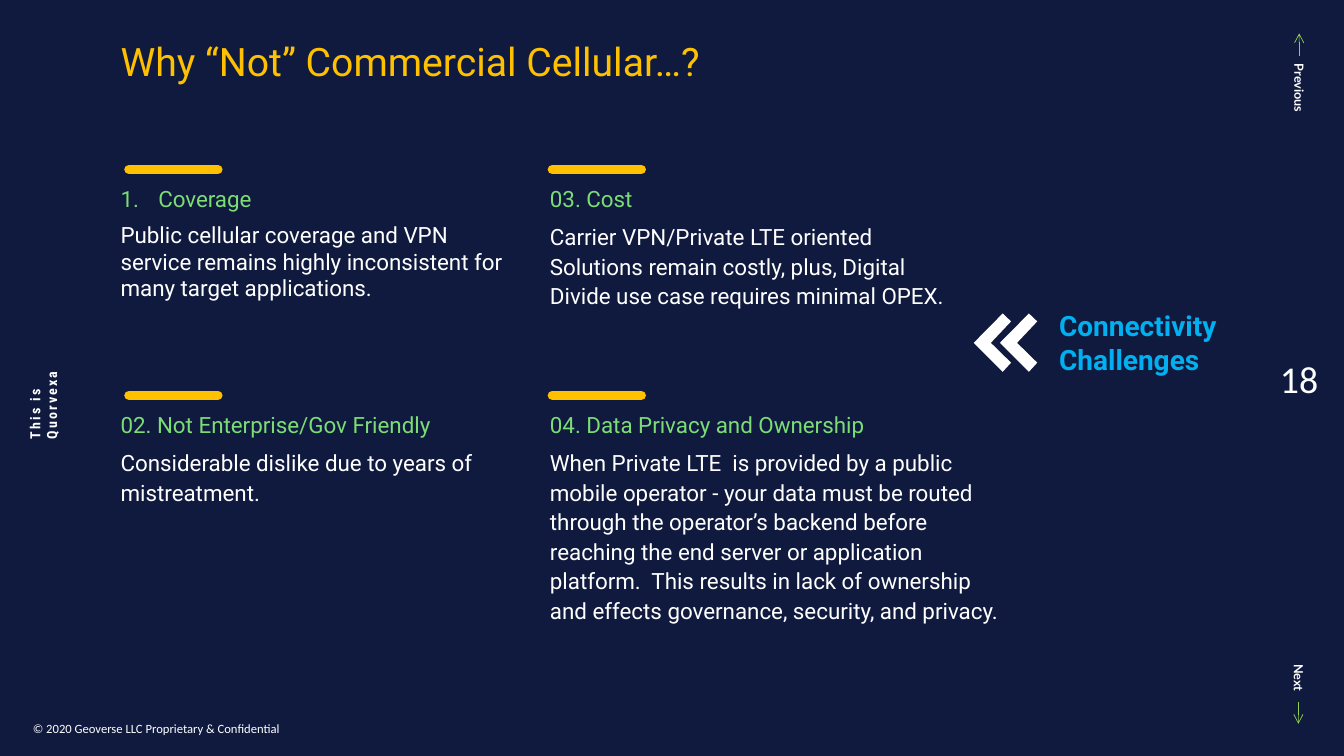
from lxml import etree
from pptx import Presentation
from pptx.dml.color import RGBColor
from pptx.enum.shapes import MSO_CONNECTOR as CONN
from pptx.enum.text import MSO_ANCHOR as ANCHOR, PP_ALIGN as ALIGN
from pptx.oxml.ns import qn
from pptx.util import Cm, Pt

NAVY, WHITE, YELLOW = "0F1A3E", "FFFFFF", "FFC000"
GREEN, ARROW_GREEN, BLUE = "7CDD75", "92D050", "00B0F0"


def rgb(hex_color):
    return RGBColor.from_string(hex_color)


def add_text(box, lines, size, font, colors, bold=False, anchor=ANCHOR.TOP, wrap=True):
    """Add a text box with one paragraph and one colour per line."""
    sp = s.shapes.add_textbox(*[Cm(v) for v in box])
    tf = sp.text_frame
    tf.word_wrap = wrap
    tf.vertical_anchor = anchor
    tf.text = "\n".join(lines)
    for p, color in zip(tf.paragraphs, colors):
        for r in p.runs:
            r.font.size, r.font.name, r.font.bold = Pt(size), font, bold
            r.font.color.rgb = rgb(color)
    return sp


def add_line(x1, y1, x2, y2, color, width):
    """Add a straight line without shadow and return its a:ln element."""
    line = s.shapes.add_connector(CONN.STRAIGHT, Cm(x1), Cm(y1), Cm(x2), Cm(y2))
    line.line.color.rgb = rgb(color)
    line.line.width = Pt(width)
    etree.SubElement(line._element.spPr, qn("a:effectLst"))
    return line.line._get_or_add_ln()


prs = Presentation()
prs.slide_width, prs.slide_height = Cm(33.87), Cm(19.05)
s = prs.slides.add_slide(prs.slide_layouts[6])
s.background.fill.solid()
s.background.fill.fore_color.rgb = rgb(NAVY)

# Previous and next marks
for label, box, x, y1, y2 in [
    ("Previous", (31.85, 1.93, 1.78, 0.64), 32.74, 1.4, 0.84),
    ("Next", (32.11, 16.79, 1.24, 0.64), 32.72, 17.68, 18.24),
]:
    add_text(box, [label], 9, "Lato", [WHITE], bold=True, wrap=False).rotation = 90
    ln = add_line(x, y1, x, y2, ARROW_GREEN, 0.5)
    etree.SubElement(ln, qn("a:tailEnd"), type="arrow")

# Side label, page number and footer
sp = add_text((-0.69, 9.19, 3.56, 0.69), ["This is\vQuorvexa"], 10, "Roboto Condensed",
              [WHITE], bold=True, anchor=ANCHOR.MIDDLE)
sp.rotation = 270
for r in sp.text_frame.paragraphs[0].runs:
    r._r.get_or_add_rPr().set("spc", "150")

tf = add_text((31.75, 7.19, 1.98, 4.67), ["18"], 27, "Calibri", [WHITE],
              anchor=ANCHOR.MIDDLE, wrap=False).text_frame
tf.margin_left = tf.margin_right = Cm(0.18)
tf.margin_top = tf.margin_bottom = Cm(0.08)
tf.paragraphs[0].alignment = ALIGN.CENTER

add_text((0.58, 17.65, 10.08, 1.02), ["© 2020 Geoverse LLC Proprietary & Confidential"],
         9, "Calibri", [WHITE], anchor=ANCHOR.BOTTOM)

# Callout with double chevron
add_text((26.44, 7.65, 5.31, 1.96), ["Connectivity", "Challenges"], 20, "Roboto",
         [BLUE, BLUE], bold=True, anchor=ANCHOR.MIDDLE)
chevron = [(26.14, 9.14), (25.63, 8.64), (26.14, 8.1), (25.93, 7.9), (25.2, 8.64), (25.93, 9.37)]
builder = s.shapes.build_freeform(Cm(chevron[0][0]), Cm(chevron[0][1]))
for shift in (0, 0.66):
    points = [(Cm(x - shift), Cm(y)) for x, y in chevron]
    if shift:
        builder.move_to(*points[0])
    builder.add_line_segments(points[1:], close=True)
sp = builder.convert_to_shape()
sp.shadow.inherit = False
sp.fill.solid()
sp.fill.fore_color.rgb = rgb(WHITE)
sp.line.fill.background()

# Four reasons, each under a yellow bar
reasons = [
    (2.79, 4.55, 10.67, 3.25, "Coverage",
     "Public cellular coverage and VPN service remains highly inconsistent for many "
     "target applications."),
    (2.79, 10.24, 10.21, 3.25, "02. Not Enterprise/Gov Friendly",
     "Considerable dislike due to years of mistreatment."),
    (13.61, 4.55, 10.67, 13.92, "03. Cost",
     "Carrier VPN/Private LTE oriented Solutions remain costly, plus, Digital Divide "
     "use case requires minimal OPEX."),
    (13.61, 10.24, 11.99, 13.92, "04. Data Privacy and Ownership",
     "When Private LTE  is provided by a public mobile operator - your data must be "
     "routed through the operator’s backend before reaching the end server or "
     "application platform.  This results in lack of ownership and effects governance, "
     "security, and privacy."),
]
for x, y, width, bar_x, heading, body in reasons:
    sp = add_text((x, y, width, 4.83), [heading, body], 16, "Roboto", [GREEN, WHITE])
    head_p, body_p = sp.text_frame.paragraphs
    head_p.space_after = Pt(6)
    if heading == "Coverage":
        pPr = head_p._p.get_or_add_pPr()
        pPr.set("marL", str(Cm(0.95)))
        pPr.set("indent", str(-Cm(0.95)))
        etree.SubElement(pPr, qn("a:buFont"), typeface="+mj-lt")
        etree.SubElement(pPr, qn("a:buAutoNum"), type="arabicPeriod")
    else:
        body_p.line_spacing = 1.1
    bar_y = y - 0.28
    add_line(bar_x, bar_y, bar_x + 2.24, bar_y, YELLOW, 6.75).set("cap", "rnd")

# Title
sp = add_text((2.79, 0.69, 25.93, 1.47), ["Why “Not” Commercial Cellular…?"], 28, "Roboto", [YELLOW])
sp.text_frame.paragraphs[0].line_spacing = 1.1

prs.save("out.pptx")
